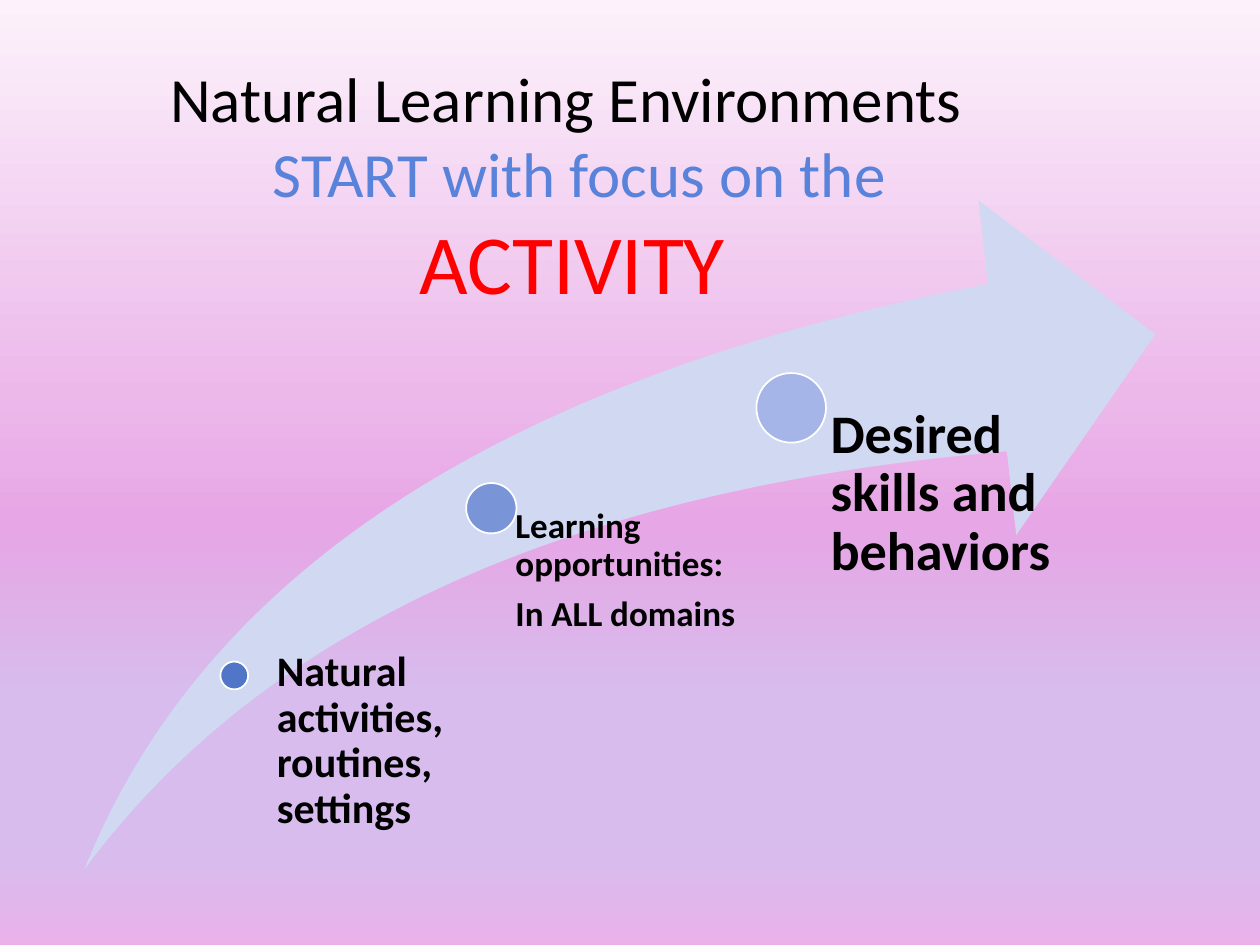
from collections import namedtuple
from dataclasses import dataclass

from lxml.etree import SubElement
from pptx import Presentation
from pptx.dml.color import RGBColor
from pptx.enum.shapes import MSO_SHAPE as Preset
from pptx.enum.text import MSO_ANCHOR as Anchor, MSO_AUTO_SIZE as AutoSize, PP_ALIGN as Align
from pptx.oxml.ns import qn
from pptx.util import Cm, Pt


@dataclass(frozen=True)
class Theme:
    font: str = "Calibri"
    ink: str = "000000"
    start: str = "5982DB"
    activity: str = "FF0000"
    arrow: str = "D1D8F1"
    outline: str = "FFFFFF"
    title_size: int = 36
    activity_size: int = 48
    backdrop: tuple = ((0, "FCF2FB"), (42, "ECB8EA"), (55, "E7A6E5"),
                       (74, "D7BCED"), (90, "D7BCED"), (100, "EAB2E9"))


THEME = Theme()
Box = namedtuple("Box", "left top width height")  # centimetres

# across, down and dot: shares of the arrow's width, height and width
# shift: label corner from the dot's centre; label: its width and height, in cm
Milestone = namedtuple("Milestone", "across down dot color shift label size paragraphs")
MILESTONES = (
    Milestone(0.14, 0.71, 0.026, "5176C7", (0.56, -0.5), (5.03, 3.91), 24,
              ("Natural activities,\nroutines,\nsettings",)),
    Milestone(0.38, 0.46, 0.047, "7A94D8", (-0.05, 0), (6.35, 7.34), 20,
              ("Learning opportunities:", "In ALL domains")),
    Milestone(0.66, 0.31, 0.065, "A5B5E7", (0.05, -0.03), (5.4, 9.37), 31,
              ("Desired skills and behaviors",)),
)
LABEL_INSET = 0.53  # share of the dot's diameter


def place(shape, box):
    shape.left, shape.top, shape.width, shape.height = map(Cm, box)


def add_span(para, text, size, color, bold=False):
    span = para.add_run()
    span.text = text
    span.font.name = THEME.font
    span.font.size = Pt(size)
    span.font.bold = bold
    span.font.color.rgb = RGBColor.from_string(color)


def add_preset(page, preset, box, color):
    shape = page.shapes.add_shape(preset, *map(Cm, box))
    shape.shadow.inherit = False
    shape.fill.solid()
    shape.fill.fore_color.rgb = RGBColor.from_string(color)
    return shape


def paint_backdrop(page):
    fill = page.background.fill
    fill.gradient()
    fill.gradient_angle = 270
    # More than two stops need XML
    stops = page.element.find(".//" + qn("a:gsLst"))
    for stop in list(stops):
        stops.remove(stop)
    for position, color in THEME.backdrop:
        stop = SubElement(stops, qn("a:gs"), pos=str(position * 1000))
        SubElement(stop, qn("a:srgbClr"), val=color)


def fill_title(page, box):
    title = page.shapes.title
    place(title, box)
    frame = title.text_frame
    frame.auto_size = AutoSize.NONE
    frame.word_wrap = True
    frame.vertical_anchor = Anchor.TOP
    frame.margin_right = Cm(3.28)  # centres the lower lines under the first
    lines = (
        ("Natural Learning Environments", THEME.title_size, THEME.ink, Align.LEFT),
        (" START with focus on the", THEME.title_size, THEME.start, Align.CENTER),
        ("ACTIVITY", THEME.activity_size, THEME.activity, Align.CENTER),
    )
    for index, (text, size, color, align) in enumerate(lines):
        para = frame.add_paragraph() if index else frame.paragraphs[0]
        para.alignment = align
        add_span(para, text, size, color)


def add_label(page, box, inset, size, paragraphs):
    frame = page.shapes.add_textbox(*map(Cm, box)).text_frame
    frame.word_wrap = True
    frame.margin_left = Cm(inset)
    frame.margin_top = frame.margin_right = frame.margin_bottom = 0
    for index, text in enumerate(paragraphs):
        para = frame.add_paragraph() if index else frame.paragraphs[0]
        para.line_spacing = 0.9
        para.space_after = Pt(0.35 * size)
        for row, line in enumerate(text.split("\n")):
            if row:
                para.add_line_break()
            add_span(para, line, size, THEME.ink, bold=True)


def add_milestone(page, box, milestone):
    center_x = box.left + milestone.across * box.width
    center_y = box.top + milestone.down * box.height
    diameter = milestone.dot * box.width
    corner = (center_x - diameter / 2, center_y - diameter / 2)
    dot = add_preset(page, Preset.OVAL, Box(*corner, diameter, diameter), milestone.color)
    dot.line.color.rgb = RGBColor.from_string(THEME.outline)
    dot.line.width = Pt(1)
    shift_x, shift_y = milestone.shift
    label = Box(center_x + shift_x, center_y + shift_y, *milestone.label)
    add_label(page, label, LABEL_INSET * diameter, milestone.size, milestone.paragraphs)


def add_rising_path(page, box):
    arrow = add_preset(page, Preset.SWOOSH_ARROW, box, THEME.arrow)
    arrow.adjustments[0] = arrow.adjustments[1] = 0.25
    arrow.line.fill.background()
    for milestone in MILESTONES:
        add_milestone(page, box, milestone)


def main():
    deck = Presentation()
    deck.slide_width, deck.slide_height = Cm(25.4), Cm(19.05)
    page = deck.slides.add_slide(deck.slide_layouts.get_by_name("Title Only"))
    paint_backdrop(page)
    fill_title(page, Box(3.18, 1.07, 19.74, 5.38))
    add_rising_path(page, Box(1.7, 4.04, 21.59, 13.49))
    deck.save("out.pptx")


if __name__ == "__main__":
    main()
